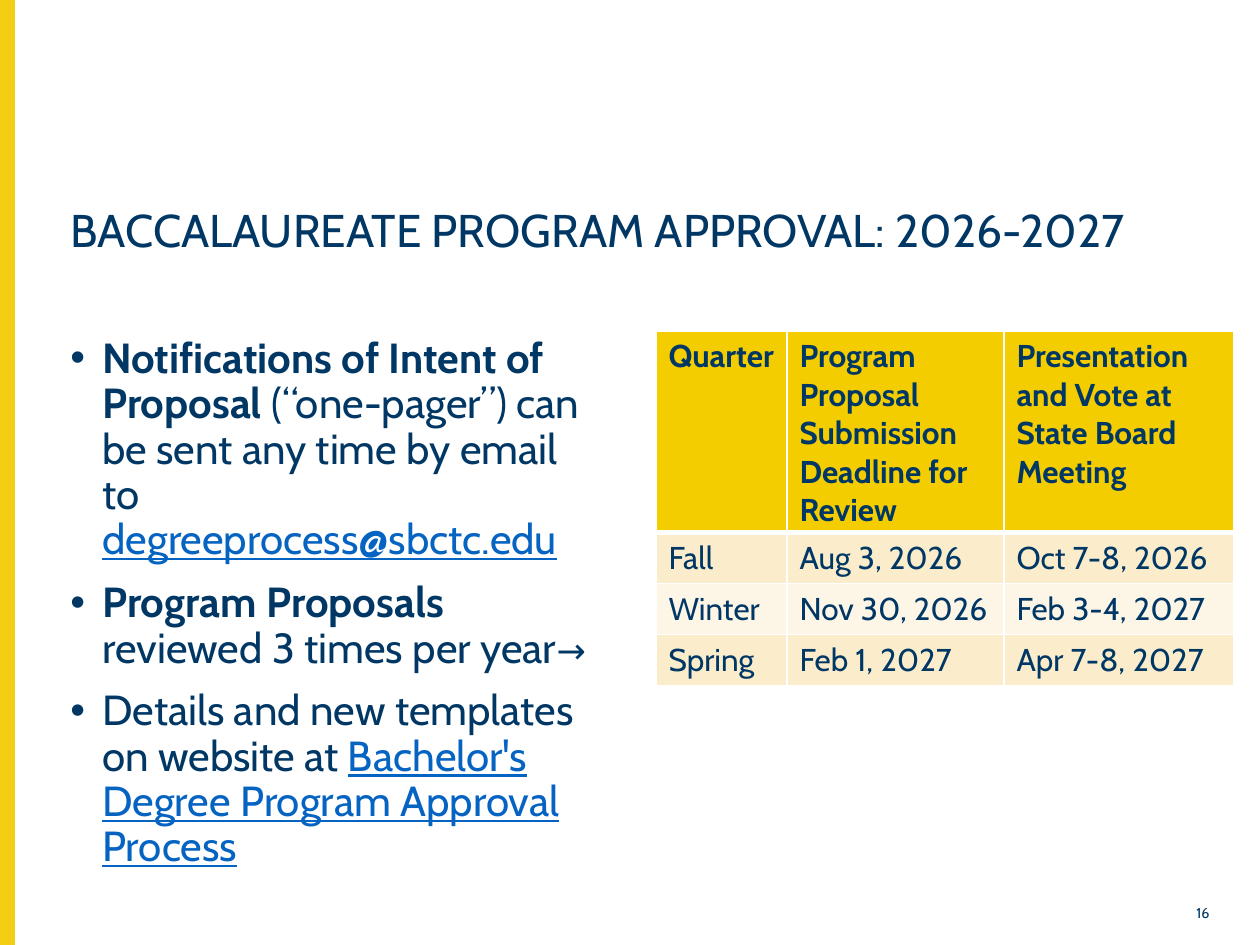
from lxml.etree import SubElement
from pptx import Presentation
from pptx.dml.color import RGBColor
from pptx.enum.shapes import MSO_SHAPE
from pptx.enum.text import MSO_ANCHOR, MSO_AUTO_SIZE, PP_ALIGN
from pptx.oxml.ns import qn
from pptx.util import Pt

EMU_PER_PX = 914400 / 126
FONT = "Cabin"
COLORS = {
    "navy": "003764",
    "link": "0563C1",
    "stripe": "F4CE12",
    "header": "F4CD00",
    "band": "FBEDCC",
    "light": "FDF6E7",
    "white": "FFFFFF",
}
POINTS = [
    [
        ("Notifications of Intent of Proposal ", "strong", 24),
        ("(“one-pager”) can be sent any time by email to ", "plain", 24),
        ("degreeprocess@sbctc.edu", "link", 24),
    ],
    [
        ("Program Proposals", "strong", 24),
        (" reviewed 3 times per year", "plain", 24),
        ("→", "plain", 20),
    ],
    [
        ("Details and new templates on website at ", "plain", 24),
        ("Bachelor's Degree Program Approval Process", "link", 24),
    ],
]
DEADLINES = [
    ("Quarter", "Program Proposal Submission Deadline for Review",
     "Presentation and Vote at State Board Meeting"),
    ("Fall", "Aug 3, 2026", "Oct 7-8, 2026"),
    ("Winter", "Nov 30, 2026", "Feb 3-4, 2027"),
    ("Spring", "Feb 1, 2027", "Apr 7-8, 2027"),
]
COLUMN_WIDTHS = [131, 217, 230]
HEADER_HEIGHT, ROW_HEIGHT = 201, 51


def emu(px):
    """Turn px into EMU."""
    return round(px * EMU_PER_PX)


def rgb(name):
    """Look up a named colour."""
    return RGBColor.from_string(COLORS[name])


def add_run(paragraph, text, size, style="plain"):
    """Add one run in a plain, strong or link style."""
    run = paragraph.add_run()
    run.text = text
    font = run.font
    font.name, font.size = FONT, Pt(size)
    font.bold = style == "strong"
    font.underline = style == "link"
    font.color.rgb = rgb("link" if style == "link" else "navy")


def add_text_box(slide, box, anchor):
    """Add a wrapping text box and return its frame."""
    frame = slide.shapes.add_textbox(*map(emu, box)).text_frame
    frame.word_wrap = True
    frame.vertical_anchor = anchor
    return frame


def add_stripe(slide, box):
    """Draw the yellow stripe along the edge."""
    stripe = slide.shapes.add_shape(MSO_SHAPE.RECTANGLE, *map(emu, box))
    stripe.shadow.inherit = False
    stripe.fill.solid()
    stripe.fill.fore_color.rgb = rgb("stripe")
    stripe.line.color.rgb = rgb("stripe")
    stripe.line.width = Pt(1)


def set_title(slide, box, text):
    """Place and format the title placeholder."""
    title = slide.shapes.title
    title.left, title.top, title.width, title.height = map(emu, box)
    frame = title.text_frame
    frame.auto_size = MSO_AUTO_SIZE.NONE
    frame.word_wrap = True
    frame.vertical_anchor = MSO_ANCHOR.TOP
    heading = frame.paragraphs[0]
    heading.alignment = PP_ALIGN.LEFT
    heading.line_spacing = 0.9
    add_run(heading, text, 26.2)


def add_points(slide, box, points):
    """Write the bulleted list."""
    frame = add_text_box(slide, box, MSO_ANCHOR.TOP)
    for index, parts in enumerate(points):
        point = frame.add_paragraph() if index else frame.paragraphs[0]
        properties = point._p.get_or_add_pPr()
        properties.set("marL", str(emu(32)))
        properties.set("indent", str(-emu(32)))
        SubElement(properties, qn("a:buFont"), typeface="Arial")
        SubElement(properties, qn("a:buChar"), char="•")
        point.line_spacing = 0.9
        if index:
            point.space_before = Pt(10)
        for text, style, size in parts:
            add_run(point, text, size, style)


def set_borders(cell, bottom, top):
    """Give a cell white borders with the bottom and top widths in points."""
    properties = cell._tc.get_or_add_tcPr()
    widths = {"a:lnL": 1, "a:lnR": 1, "a:lnT": top, "a:lnB": bottom}
    for position, (tag, width) in enumerate(widths.items()):
        line = properties.makeelement(qn(tag), {"w": str(Pt(width))})
        fill = SubElement(line, qn("a:solidFill"))
        SubElement(fill, qn("a:srgbClr"), val=COLORS["white"])
        properties.insert(position, line)


def add_deadlines(slide, box, rows):
    """Build the table of deadlines by quarter."""
    frame = slide.shapes.add_table(len(rows), len(rows[0]), *map(emu, box))
    table = frame.table
    table.horz_banding = False
    for column, width in zip(table.columns, COLUMN_WIDTHS):
        column.width = emu(width)
    for r, texts in enumerate(rows):
        table.rows[r].height = emu(ROW_HEIGHT if r else HEADER_HEIGHT)
        shade = "header" if r == 0 else "band" if r % 2 else "light"
        for c, text in enumerate(texts):
            cell = table.cell(r, c)
            cell.fill.solid()
            cell.fill.fore_color.rgb = rgb(shade)
            set_borders(cell, 1 if r else 3, 3 if r == 1 else 1)
            add_run(cell.text_frame.paragraphs[0], text, 18,
                    "plain" if r else "strong")


def add_page_number(slide, box, number):
    """Write the page number at the right."""
    frame = add_text_box(slide, box, MSO_ANCHOR.MIDDLE)
    frame.margin_top = frame.margin_bottom = 0
    frame.paragraphs[0].alignment = PP_ALIGN.RIGHT
    add_run(frame.paragraphs[0], number, 8.2)


def main():
    """Build and save the slide."""
    deck = Presentation()
    deck.slide_width, deck.slide_height = emu(1260), emu(945)
    slide = deck.slides.add_slide(deck.slide_layouts[5])
    add_stripe(slide, (0, 0, 14, 945))
    set_title(slide, (58, 202, 1176, 100),
              "BACCALAUREATE PROGRAM APPROVAL: 2026-2027")
    add_points(slide, (58, 331, 553, 547), POINTS)
    table_height = HEADER_HEIGHT + ROW_HEIGHT * (len(DEADLINES) - 1)
    add_deadlines(slide, (656, 331, sum(COLUMN_WIDTHS), table_height),
                  DEADLINES)
    add_page_number(slide, (1159, 900, 63, 26), "16")
    deck.save("out.pptx")


if __name__ == "__main__":
    main()
